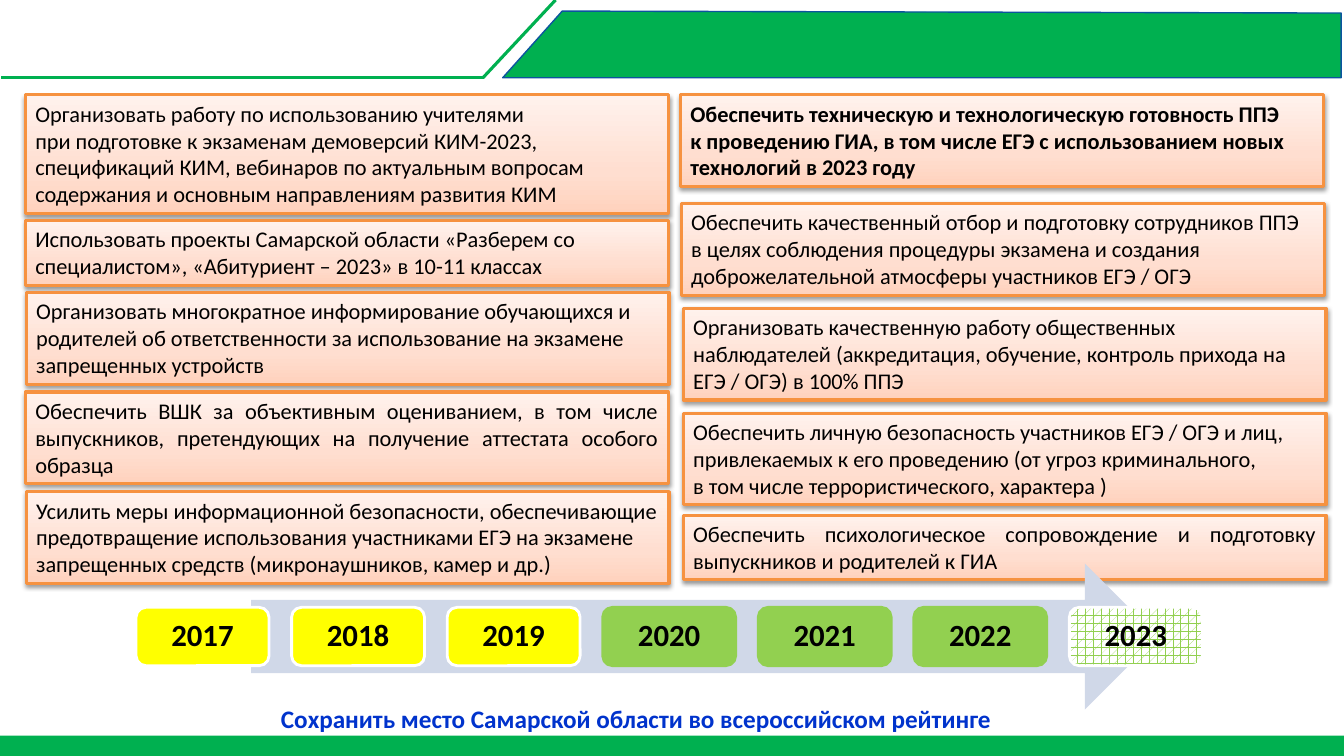
from copy import deepcopy
from dataclasses import dataclass

from lxml import etree
from pptx import Presentation
from pptx import util as u
from pptx.dml.color import RGBColor
from pptx.enum import dml, shapes, text
from pptx.oxml import ns


@dataclass(frozen=True)
class Theme:
    font: str = "Calibri"
    green: str = "00B050"
    navy: str = "0C549E"
    orange: str = "F69240"
    peach: tuple = ((0, "FFD2BD"), (0.35, "FFDED0"), (1, "FFF2ED"))
    arrow: str = "D0D8E8"
    yellow: str = "FFFF00"
    lime: str = "92D050"
    white: str = "FFFFFF"
    black: str = "000000"
    blue: str = "0033CC"
    card_size: int = 16
    slogan_size: int = 18
    year_size: int = 22


T = Theme()
Cm = u.Cm

LEFT_CARDS = [
    (0, 2.39, 4, False, "l", ["Организовать работу по использованию учителями",
     "при подготовке к экзаменам демоверсий КИМ-2023, спецификаций КИМ, вебинаров "
     "по актуальным вопросам содержания и основным направлениям развития КИМ"]),
    (0, 5.56, 2, False, "l", ["Использовать проекты Самарской области «Разберем со "
     "специалистом», «Абитуриент – 2023» в 10-11 классах"]),
    (0.02, 7.37, 3, False, "l", ["Организовать многократное информирование обучающихся и "
     "родителей об ответственности за использование на экзамене запрещенных устройств"]),
    (0, 9.88, 3, False, "j", ["Обеспечить ВШК за объективным оцениванием, в том числе "
     "выпускников, претендующих на получение аттестата особого образца"]),
    (0.02, 12.39, 3, False, "l", ["Усилить меры информационной безопасности, обеспечивающие "
     "предотвращение использования участниками ЕГЭ на экзамене запрещенных средств "
     "(микронаушников, камер и др.)"]),
]
RIGHT_CARDS = [
    (0, 2.39, 3, True, "l", ["Обеспечить техническую и технологическую готовность ППЭ\n"
     "к проведению ГИА, в том числе ЕГЭ с использованием новых технологий в 2023 году"]),
    (0.02, 5.13, 3, False, "l", ["Обеспечить качественный отбор и подготовку сотрудников ППЭ "
     "в целях соблюдения процедуры экзамена и создания доброжелательной атмосферы "
     "участников ЕГЭ / ОГЭ"]),
    (0.07, 7.77, 3, False, "l", ["Организовать качественную работу общественных наблюдателей "
     "(аккредитация, обучение, контроль прихода на ЕГЭ / ОГЭ) в 100% ППЭ"]),
    (0.07, 10.41, 3, False, "l", ["Обеспечить личную безопасность участников ЕГЭ / ОГЭ и лиц, "
     "привлекаемых к его проведению (от угроз криминального,\n"
     "в том числе террористического, характера )"]),
    (0.07, 12.98, 2, False, "j", ["Обеспечить психологическое сопровождение и подготовку "
     "выпускников и родителей к ГИА"]),
]
ALIGN = {"l": text.PP_ALIGN.LEFT, "c": text.PP_ALIGN.CENTER, "j": text.PP_ALIGN.JUSTIFY}


def rgb(value):
    return RGBColor.from_string(value)


def paint(sp, fill, line=None, width=1):
    sp.shadow.inherit = False
    sp.fill.solid()
    sp.fill.fore_color.rgb = rgb(fill)
    if line:
        sp.line.color.rgb = rgb(line)
        sp.line.width = u.Pt(width)
    else:
        sp.line.fill.background()


def add_box(s, kind, x, y, w, h):
    return s.shapes.add_shape(kind, Cm(x), Cm(y), Cm(w), Cm(h))


def write(tf, paragraphs, size, color, bold=False, align="l"):
    tf.word_wrap = True
    for i, content in enumerate(paragraphs):
        p = tf.paragraphs[0] if i == 0 else tf.add_paragraph()
        p.alignment = ALIGN[align]
        for j, part in enumerate(content.split("\n")):
            if j:
                p.add_line_break()
            r = p.add_run()
            r.text = part
            r.font.name, r.font.size, r.font.bold = T.font, u.Pt(size), bold
            r.font.color.rgb = rgb(color)


def peach_gradient(sp):
    sp.fill.gradient()
    sp.fill.gradient_angle = 90
    stops = sp._element.spPr.find(".//" + ns.qn("a:gsLst"))
    stops.append(deepcopy(stops[0]))
    for stop, (position, color) in zip(sp.fill.gradient_stops, T.peach):
        stop.position = position
        stop.color.rgb = rgb(color)


def soft_shadow(sp):
    effects = sp._element.spPr.find(ns.qn("a:effectLst"))
    shadow = etree.SubElement(effects, ns.qn("a:outerShdw"), blurRad="40000",
                              dist="20000", dir="5400000", rotWithShape="0")
    color = etree.SubElement(shadow, ns.qn("a:srgbClr"), val=T.black)
    etree.SubElement(color, ns.qn("a:alpha"), val="38000")


def header(s, x, y, w, h):
    points = [(x + 14.17, y + 0.28), (x + w - 0.07, y + 0.33),
              (x + w - 0.07, y + h), (x + 12.67, y + h)]
    points = [(Cm(px), Cm(py)) for px, py in points]
    builder = s.shapes.build_freeform(*points[0], scale=1.0)
    builder.add_line_segments(points[1:], close=True)
    paint(builder.convert_to_shape(), T.green, T.navy)
    for x1, y1, x2, y2 in [(14, 0, 12.17, h), (12.19, h, 0.03, h)]:
        line = s.shapes.add_connector(shapes.MSO_CONNECTOR.STRAIGHT, Cm(x + x1),
                                      Cm(y + y1), Cm(x + x2), Cm(y + y2))
        line.line.color.rgb = rgb(T.green)
        line.line.width = u.Pt(2.25)
        etree.SubElement(line._element.spPr, ns.qn("a:effectLst"))


def footer(s, x, y, w, h):
    paint(add_box(s, shapes.MSO_SHAPE.RECTANGLE, x, y, w, h), T.green)


def card_column(s, x, w, cards):
    for dx, top, lines, bold, align, paragraphs in cards:
        sp = add_box(s, shapes.MSO_SHAPE.RECTANGLE, x + dx, top, w, 0.27 + 0.68 * lines)
        paint(sp, T.white, T.orange, 2.25)
        peach_gradient(sp)
        soft_shadow(sp)
        tf = sp.text_frame
        tf.vertical_anchor = text.MSO_ANCHOR.TOP
        write(tf, paragraphs, T.card_size, T.black, bold, align)
        tf.auto_size = text.MSO_AUTO_SIZE.SHAPE_TO_FIT_TEXT


def timeline(s, x, y, w, h):
    arrow = add_box(s, shapes.MSO_SHAPE.RIGHT_ARROW, x + 2.9, y, w - 4.02, h)
    paint(arrow, T.arrow)
    years = range(2017, 2024)
    tile_w, tile_h = 3.35, 1.47
    pitch = (w - tile_w) / (len(years) - 1)
    for i, year in enumerate(years):
        sp = add_box(s, shapes.MSO_SHAPE.ROUNDED_RECTANGLE, x + i * pitch,
                     y + (h - tile_h) / 2, tile_w, tile_h)
        fill, line = (T.yellow, T.white) if year < 2020 else (T.lime, T.lime)
        paint(sp, fill, line, 2)
        if year == years[-1]:
            sp.fill.patterned()
            sp.fill.pattern = dml.MSO_PATTERN.PLAID
            sp.fill.fore_color.rgb = rgb(T.lime)
            sp.fill.back_color.rgb = rgb(T.white)
            sp.line.color.rgb = rgb(T.white)
        tf = sp.text_frame
        tf.vertical_anchor = text.MSO_ANCHOR.MIDDLE
        write(tf, [str(year)], T.year_size, T.black, True, "c")
        tf.paragraphs[0].line_spacing = 0.9


def slogan(s, x, y, w, h):
    tf = s.shapes.add_textbox(Cm(x), Cm(y), Cm(w), Cm(h)).text_frame
    write(tf, ["Сохранить место Самарской области во всероссийском рейтинге"],
          T.slogan_size, T.blue, True)
    tf.auto_size = text.MSO_AUTO_SIZE.SHAPE_TO_FIT_TEXT


def main():
    prs = Presentation()
    prs.slide_width, prs.slide_height = Cm(33.87), Cm(19.05)
    s = prs.slides.add_slide(prs.slide_layouts[6])
    header(s, 0, 0, 33.87, 1.96)
    footer(s, 0, 18.54, 33.87, 0.51)
    card_column(s, 0.64, 16.2, LEFT_CARDS)
    card_column(s, 17.15, 16.2, RIGHT_CARDS)
    slogan(s, 6.83, 17.6, 21.18, 1.02)
    timeline(s, 3.43, 14.2, 26.87, 3.68)
    prs.save("out.pptx")


if __name__ == "__main__":
    main()
